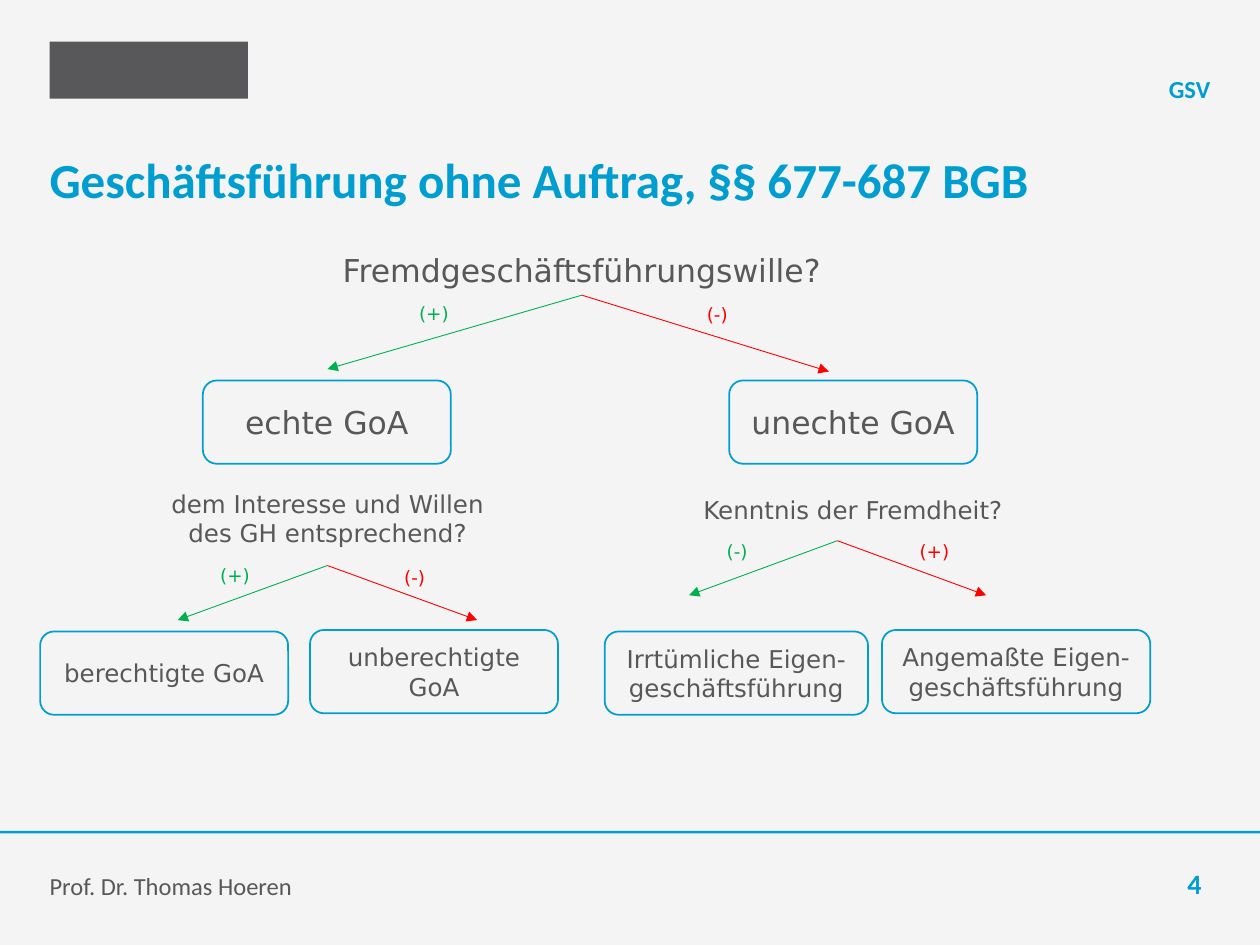
from lxml import etree
from pptx import Presentation, util as u
from pptx.dml import color
from pptx.enum import shapes, text
from pptx.oxml import ns

BLUE, GREY, PAPER = "009DD1", "58585A", "F4F4F4"
GREEN, RED = "00B050", "FF0000"


def rgb(value):
    return color.RGBColor.from_string(value)


class Deck:
    """Holds the style and the current slide."""

    head = {"name": "Calibri", "size": 14, "color": BLUE, "bold": True}
    body = {"name": "DejaVu Sans", "size": 14, "color": GREY, "bold": False}

    def __init__(self):
        self.prs = Presentation()
        self.prs.slide_width, self.prs.slide_height = u.Cm(25.4), u.Cm(19.05)
        self.s = self.prs.slides.add_slide(self.prs.slide_layouts[6])
        fill = self.s.background.fill
        fill.solid()
        fill.fore_color.rgb = rgb(PAPER)

    def add_words(self, tf, words, align, style):
        p = tf.paragraphs[0]
        p.alignment = getattr(text.PP_ALIGN, align)
        r = p.add_run()
        r.text = words
        for key, value in style.items():
            if key == "color":
                r.font.color.rgb = rgb(value)
            else:
                setattr(r.font, key, u.Pt(value) if key == "size" else value)

    def shape(self, kind, at, fill, line=None):
        sp = self.s.shapes.add_shape(kind, *map(u.Cm, at))
        sp.shadow.inherit = False
        sp.fill.solid()
        sp.fill.fore_color.rgb = rgb(fill)
        if line:
            sp.line.color.rgb = rgb(line)
            sp.line.width = u.Pt(1)
        else:
            sp.line.fill.background()
        return sp

    def box(self, words, at, size=14):
        sp = self.shape(shapes.MSO_SHAPE.ROUNDED_RECTANGLE, at, PAPER, BLUE)
        sp.text_frame.word_wrap = True
        sp.text_frame.vertical_anchor = text.MSO_ANCHOR.MIDDLE
        self.add_words(sp.text_frame, words, "CENTER", {**self.body, "size": size})

    def frame(self, words, at, align="LEFT", anchor="BOTTOM", **style):
        """Text without margins, for the title, header and footer."""
        tf = self.s.shapes.add_textbox(*map(u.Cm, at)).text_frame
        tf.word_wrap = True
        tf.vertical_anchor = getattr(text.MSO_ANCHOR, anchor)
        for side in ("left", "top", "right", "bottom"):
            setattr(tf, f"margin_{side}", 0)
        self.add_words(tf, words, align, {**self.head, **style})

    def label(self, words, at, align="CENTER", wrap=False, **style):
        sp = self.s.shapes.add_textbox(*map(u.Cm, at))
        sp.text_frame.word_wrap = wrap
        sp.text_frame.auto_size = text.MSO_AUTO_SIZE.SHAPE_TO_FIT_TEXT
        self.add_words(sp.text_frame, words, align, {**self.body, **style})
        return sp

    def arrow(self, start, end, tint, source=None):
        c = self.s.shapes.add_connector(
            shapes.MSO_CONNECTOR.STRAIGHT, *map(u.Cm, start + end))
        if source is not None:
            c.begin_connect(source, 2)
        c.line.color.rgb = rgb(tint)
        c.line.width = u.Pt(0.5)
        props = c._element.spPr
        etree.SubElement(props.find(ns.qn("a:ln")), ns.qn("a:tailEnd"), type="triangle")
        etree.SubElement(props, ns.qn("a:effectLst"))

    def branch(self, apex, ends, signs, source=None):
        """A green arrow to the left and a red one to the right, each with a sign."""
        for end, (sign, x, y), tint in zip(ends, signs, (GREEN, RED)):
            self.arrow(apex, end, tint, source)
            width = 1.19 if sign == "(+)" else 1.02
            self.label(sign, (x, y, width, 0.73), "LEFT", size=10.5, color=tint)


def main():
    d = Deck()

    # Header, title and footer
    d.shape(shapes.MSO_SHAPE.RECTANGLE, (1, 0.84, 4, 1.15), GREY)
    d.shape(shapes.MSO_SHAPE.RECTANGLE, (0, 16.75, 25.4, 0.05), BLUE)
    d.frame("Geschäftsführung ohne Auftrag, §§ 677-687 BGB",
            (1, 3.02, 23.4, 1.6), anchor="TOP", size=28)
    d.frame("GSV", (10, 1.09, 14.4, 1), "RIGHT")
    d.frame("Prof. Dr. Thomas Hoeren", (1, 17.15, 14.4, 1), color=GREY, bold=False)
    d.frame("4", (22.4, 17.15, 1.82, 1), "RIGHT", size=16)

    # Questions
    root = d.label("Fremdgeschäftsführungswille?", (6.6, 4.93, 10.26, 1.02), size=18)
    d.label("dem Interesse und Willen des GH entsprechend?",
            (3.05, 9.73, 7.11, 1.45), wrap=True)
    d.label("Kenntnis der Fremdheit?", (13.87, 9.86, 6.65, 0.86))

    # Results
    d.box("echte GoA", (4.09, 7.67, 5, 1.68), 18)
    d.box("unechte GoA", (14.7, 7.67, 5, 1.68), 18)
    for words, x, y, width in (
            ("berechtigte GoA", 0.81, 12.73, 5),
            ("unberechtigte GoA", 6.25, 12.7, 5),
            ("Irrtümliche Eigen-geschäftsführung", 12.19, 12.73, 5.31),
            ("Angemaßte Eigen-geschäftsführung", 17.78, 12.7, 5.41)):
        d.box(words, (x, y, width, 1.68))

    # Branches
    d.branch((11.73, 5.95), ((6.6, 7.44), (16.71, 7.49)),
             (("(+)", 8.2, 5.97), ("(-)", 14, 5.99)), root)
    d.branch((6.6, 11.4), ((3.58, 12.5), (9.62, 12.5)),
             (("(+)", 4.19, 11.25), ("(-)", 7.9, 11.28)))
    d.branch((16.88, 10.9), ((13.89, 12), (19.88, 12)),
             (("(-)", 14.4, 10.77), ("(+)", 18.29, 10.77)))

    d.prs.save("out.pptx")


if __name__ == "__main__":
    main()
